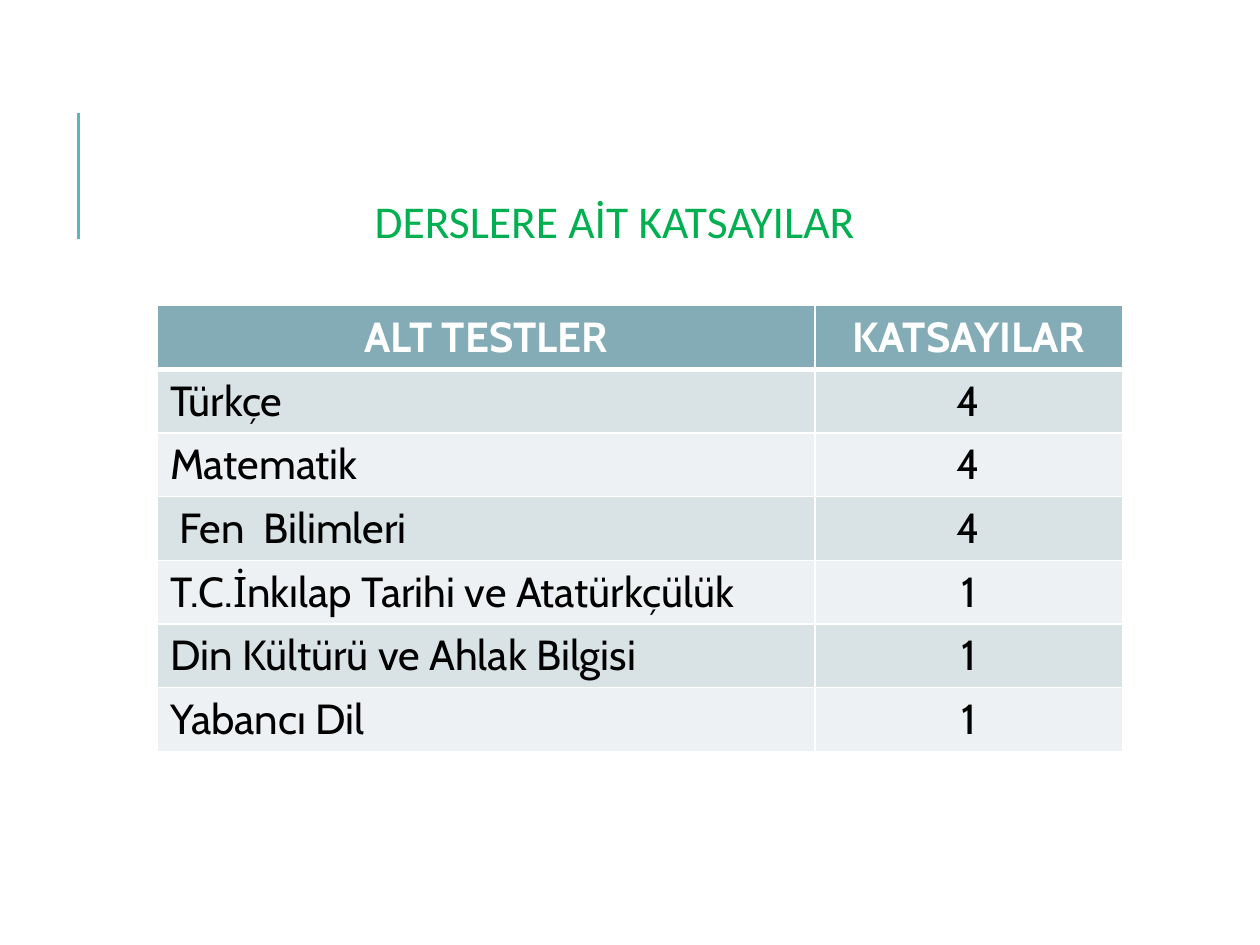
import pptx
import pptx.util
import pptx.dml.color
import pptx.enum.shapes
import pptx.enum.text
import pptx.oxml
import pptx.oxml.ns

Pt = pptx.util.Pt
RGBColor = pptx.dml.color.RGBColor
ALIGN = pptx.enum.text.PP_ALIGN

TITLE = "DERSLERE AİT KATSAYILAR"
ROWS = [
    ("ALT TESTLER", "KATSAYILAR"),
    ("Türkçe", "4"),
    ("Matematik", "4"),
    (" Fen  Bilimleri", "4"),
    ("T.C.İnkılap Tarihi ve Atatürkçülük", "1"),
    ("Din Kültürü ve Ahlak Bilgisi", "1"),
    ("Yabancı Dil", "1"),
]
COLUMN_WIDTHS = (375.6, 175.9)
ROW_HEIGHT = 36

WHITE = RGBColor(0xFF, 0xFF, 0xFF)
BLACK = RGBColor(0, 0, 0)
GREEN = RGBColor(0x00, 0xB0, 0x50)
TEAL = RGBColor(0x58, 0xB6, 0xC0)
HEADER_FILL = RGBColor(0x84, 0xAC, 0xB6)
BAND_FILLS = (RGBColor(0xED, 0xF1, 0xF3), RGBColor(0xD9, 0xE3, 0xE5))


def write_text(frame, text, font, size, color, bold=False, align=ALIGN.LEFT):
    paragraph = frame.paragraphs[0]
    paragraph.alignment = align
    run = paragraph.add_run()
    run.text = text
    run.font.name = font
    run.font.size = Pt(size)
    run.font.bold = bold
    run.font.color.rgb = color


def set_borders(cell, color, **widths):
    """Draw cell borders; keys are L, R, T, B and values are points."""
    properties = cell._tc.get_or_add_tcPr()
    for index, (side, width) in enumerate(widths.items()):
        border = pptx.oxml.parse_xml(
            f'<a:ln{side} {pptx.oxml.ns.nsdecls("a")} w="{Pt(width)}">'
            f'<a:solidFill><a:srgbClr val="{color}"/></a:solidFill></a:ln{side}>')
        properties.insert(index, border)


def add_accent_line(slide):
    line = slide.shapes.add_connector(
        pptx.enum.shapes.MSO_CONNECTOR.STRAIGHT, Pt(44.8), Pt(136.8), Pt(44.8), Pt(64.8))
    line.line.color.rgb = TEAL
    line.line.width = Pt(1.5)
    line._element.spPr.append(
        pptx.oxml.parse_xml(f'<a:effectLst {pptx.oxml.ns.nsdecls("a")}/>'))


def add_coefficient_table(slide):
    table = slide.shapes.add_table(
        len(ROWS), len(COLUMN_WIDTHS), Pt(90), Pt(174.6),
        Pt(sum(COLUMN_WIDTHS)), Pt(ROW_HEIGHT * len(ROWS))).table
    for column, width in zip(table.columns, COLUMN_WIDTHS):
        column.width = Pt(width)
    for row_index, row in enumerate(ROWS):
        header = row_index == 0
        for column_index, text in enumerate(row):
            cell = table.cell(row_index, column_index)
            cell.fill.solid()
            cell.fill.fore_color.rgb = HEADER_FILL if header else BAND_FILLS[row_index % 2]
            set_borders(cell, WHITE, L=1, R=1,
                        T=3 if row_index == 1 else 1, B=3 if header else 1)
            centered = header or column_index == 1
            write_text(cell.text_frame, text, font="Cabin", size=24,
                       color=WHITE if header else BLACK, bold=header,
                       align=ALIGN.CENTER if centered else ALIGN.LEFT)


def add_title(slide):
    box = slide.shapes.add_textbox(Pt(90), Pt(106.6), Pt(522.7), Pt(38.9))
    box.text_frame.word_wrap = True
    box.text_frame.auto_size = pptx.enum.text.MSO_AUTO_SIZE.SHAPE_TO_FIT_TEXT
    write_text(box.text_frame, TITLE, font="Calibri", size=26, color=GREEN,
               align=ALIGN.CENTER)


def main():
    presentation = pptx.Presentation()
    presentation.slide_width = Pt(720)
    presentation.slide_height = Pt(540)
    slide = presentation.slides.add_slide(presentation.slide_layouts[6])
    add_accent_line(slide)
    add_coefficient_table(slide)
    add_title(slide)
    presentation.save("out.pptx")


if __name__ == "__main__":
    main()
